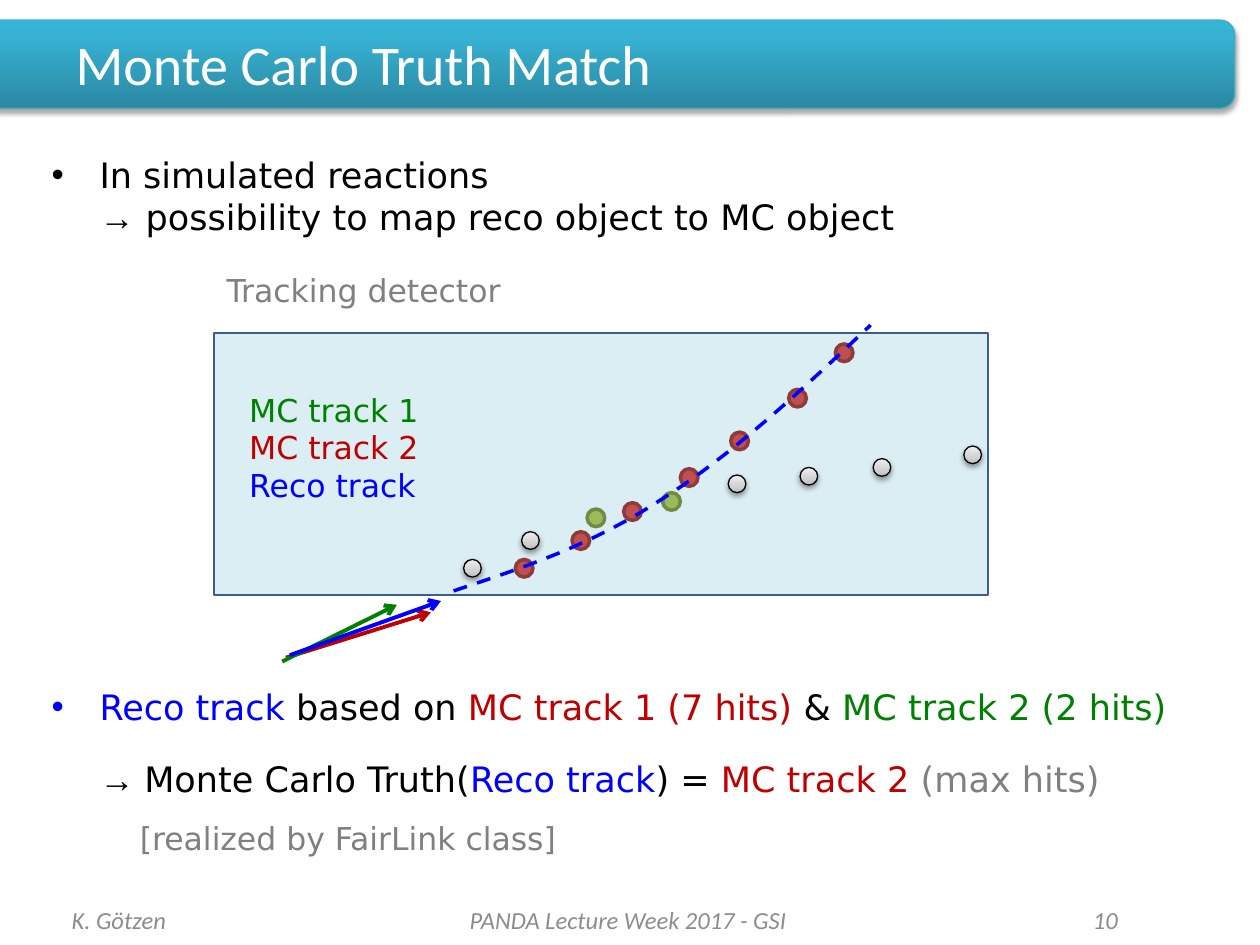
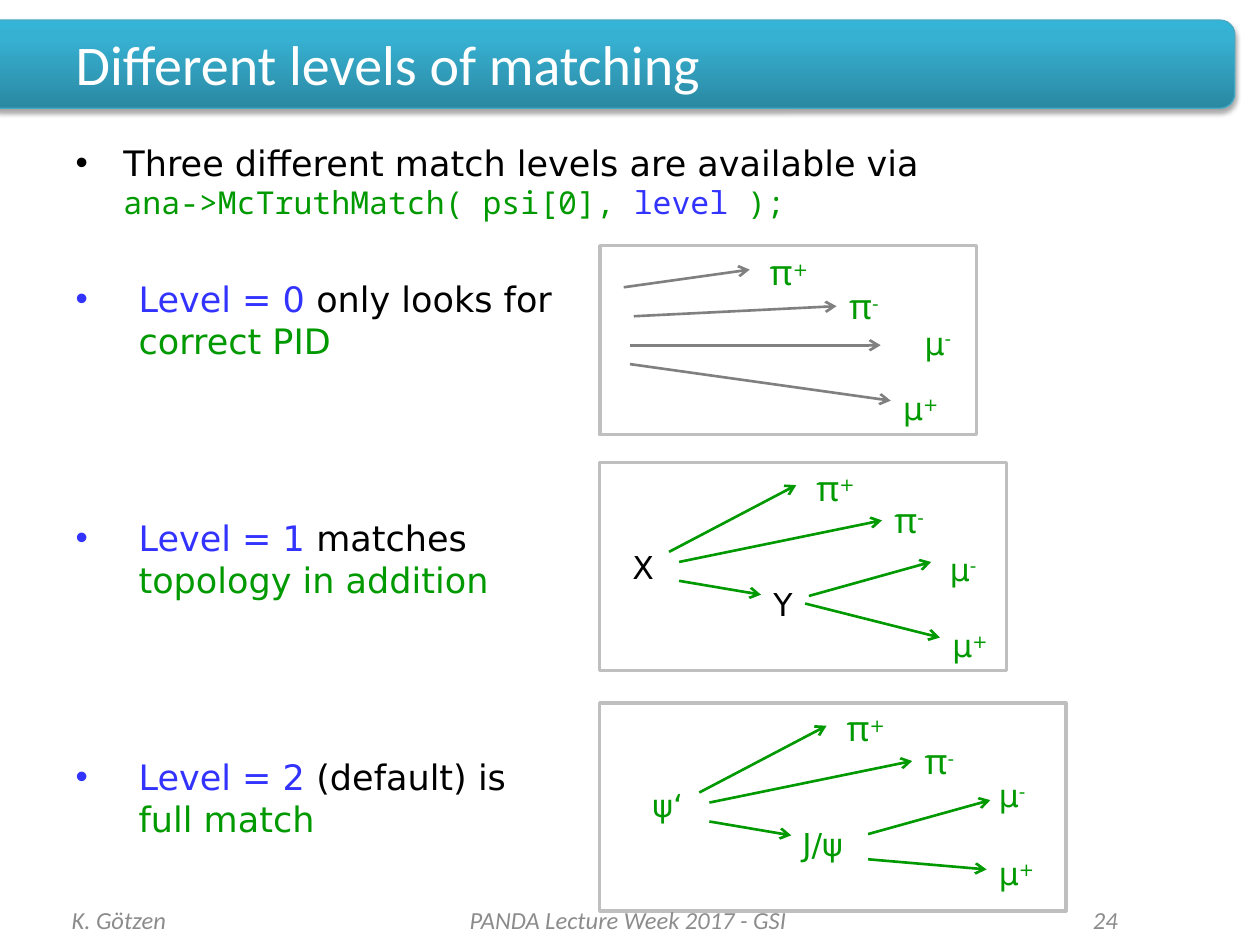
from lxml.etree import SubElement
from pptx import Presentation
from pptx.dml.color import RGBColor
from pptx.enum.dml import MSO_LINE_DASH_STYLE as Dash
from pptx.enum.shapes import MSO_CONNECTOR as Conn, MSO_SHAPE as Shape
from pptx.enum.text import MSO_ANCHOR as Anchor, MSO_AUTO_SIZE as Auto, PP_ALIGN as Align
from pptx.oxml.ns import qn
from pptx.util import Inches, Pt

WIDTH, HEIGHT = Inches(10), Inches(7.5)
COL, ROW = WIDTH / 100, HEIGHT / 75
SANS, MONO, GREEK, HEAD, ARROW = "DejaVu Sans", "Noto Sans Mono", "Cabin", "Calibri", "Arial"
BLACK, WHITE, GREY = "000000", "FFFFFF", "808080"
RED, GREEN, BLUE = "C00000", "008000", "0000FF"
LIME, VIOLET = "009900", "3333FF"

LABEL_SIZES = {"π+": (5.2, 4.4), "π-": (4.6, 4.4), "μ-": (4.4, 4), "μ+": (5, 4),
               "X": (3.8, 4), "Y": (3.6, 4), "ψ‘": (4.8, 4), "J/ψ": (6.4, 4)}
PION_ARROWS = [(5.5, 7.1, 15.6, 1.8), (6.3, 7.9, 22.4, 4.6), (6.3, 9.4, 12.8, 10.5)]
PION_LABELS = [("π+", 16.2, -0.2), ("π-", 22.4, 2.4)]


def rgb(value):
    return RGBColor.from_string(value)


def cells(x, y, w, h):
    return int(x * COL), int(y * ROW), int(w * COL), int(h * ROW)


def place(sp, box):
    sp.left, sp.top, sp.width, sp.height = cells(*box)


def add_runs(p, runs, size=20, font=SANS):
    for text, color, *style in runs:
        for i, part in enumerate(text.split("\n")):
            if i:
                p.add_line_break()
            if part:
                r = p.add_run()
                r.text = part
                r.font.color.rgb = rgb(color)
                r.font.name = style[0] if style else font
                r.font.size = Pt(style[1] if len(style) > 1 else size)


def add_text(s, box, lines, size=18, font=SANS, align=Align.LEFT, wrap=False, anchor=Anchor.TOP):
    sp = s.shapes.add_textbox(*cells(*box))
    tf = sp.text_frame
    tf.word_wrap, tf.vertical_anchor = wrap, anchor
    for i, runs in enumerate(lines):
        p = tf.add_paragraph() if i else tf.paragraphs[0]
        p.alignment = align
        add_runs(p, runs, size, font)
    return sp


def add_figure(s, kind, box, fill, line, width):
    sp = s.shapes.add_shape(kind, *cells(*box))
    sp.shadow.inherit = False
    if fill is None:
        sp.fill.background()
    elif isinstance(fill, str):
        sp.fill.solid()
        sp.fill.fore_color.rgb = rgb(fill)
    else:
        sp.fill.gradient()
        sp.fill.gradient_angle = 90
        stops = sp.element.spPr.find(qn("a:gradFill")).find(qn("a:gsLst"))
        for stop in list(stops):
            stops.remove(stop)
        for position, color in fill:
            stop = SubElement(stops, qn("a:gs"), pos=str(position * 1000))
            SubElement(stop, qn("a:srgbClr"), val=color)
    sp.line.color.rgb = rgb(line)
    sp.line.width = Pt(width)
    return sp


def add_shadow(sp, opacity, blur, distance):
    effects = sp.element.spPr.find(qn("a:effectLst"))
    shadow = SubElement(effects, qn("a:outerShdw"), blurRad=str(Pt(blur)), dist=str(Pt(distance)),
                        dir="5400000", rotWithShape="0")
    color = SubElement(shadow, qn("a:srgbClr"), val=BLACK)
    SubElement(color, qn("a:alpha"), val=str(opacity * 1000))


def add_arrow(s, box, ends, color, width):
    x, y = box[:2]
    x1, y1, x2, y2 = ends
    cx = s.shapes.add_connector(Conn.STRAIGHT, *cells(x + x1, y + y1, x + x2, y + y2))
    cx.line.color.rgb = rgb(color)
    cx.line.width = Pt(width)
    spPr = cx.element.spPr
    SubElement(spPr.find(qn("a:ln")), qn("a:tailEnd"), type="arrow")
    SubElement(spPr, qn("a:effectLst"))
    return cx


def add_band(prs, s):
    sp = add_figure(s, Shape.ROUNDED_RECTANGLE, (-1.2, 1.6, 99.2, 7),
                    [(0, "2A88A2"), (80, "37B1D2"), (100, "34B4D6")], "46AAC5", 0.75)
    add_shadow(sp, 35, 3.1, 1.8)
    prs.slide_master.shapes.element.insert(2, sp.element)


def add_title(s, text):
    sp = s.shapes.title
    place(sp, (5, 1.8, 90, 6.4))
    tf = sp.text_frame
    tf.text = text
    tf.auto_size, tf.vertical_anchor = Auto.NONE, Anchor.MIDDLE
    p = tf.paragraphs[0]
    p.alignment = Align.LEFT
    font = p.runs[0].font
    font.name, font.size, font.color.rgb = HEAD, Pt(32), rgb(WHITE)


def add_body(s, box, items):
    sp = s.placeholders[1]
    place(sp, box)
    tf = sp.text_frame
    tf.auto_size = Auto.NONE
    for i, (gap, margin, bullet, runs) in enumerate(items):
        p = tf.add_paragraph() if i else tf.paragraphs[0]
        if gap:
            p.space_before = Pt(gap)
        pPr = p._p.get_or_add_pPr()
        pPr.set("marL", str(Inches(margin)))
        pPr.set("indent", str(-Inches(margin) if bullet else 0))
        if not bullet:
            SubElement(pPr, qn("a:buNone"))
        add_runs(p, runs)


def add_footer(s, number):
    for x, w, text, align in [(4.7, 23.3, "K. Götzen", Align.LEFT),
                              (30.3, 39.1, "PANDA Lecture Week 2017 - GSI", Align.CENTER),
                              (75, 14.7, str(number), Align.RIGHT)]:
        sp = add_text(s, (x, 71, w, 4), [[(text, "8C8C8C")]], 14, HEAD, align, True, Anchor.MIDDLE)
        sp.text_frame.paragraphs[0].runs[0].font.italic = True


def add_hits(s, box, centres, fill, line, width, shaded=False):
    for x, y in centres:
        sp = add_figure(s, Shape.OVAL, (box[0] + x - 0.7, box[1] + y - 0.7, 1.4, 1.4),
                        fill, line, width)
        if shaded:
            add_shadow(sp, 38, 3.1, 1.6)


def bezier(a, b, c, d, steps=16):
    for i in range(1, steps + 1):
        t = i / steps
        u = 1 - t
        yield tuple(u**3 * k + 3 * u * u * t * m + 3 * u * t * t * n + t**3 * q
                    for k, m, n, q in zip(a, b, c, d))


def add_reco_curve(s, box):
    start, middle, end = (19, 20.5), (35.4, 13.3), (52.1, -0.6)
    curve = [start, *bezier(start, (24.4, 18.7), (29.9, 16.9), middle),
             *bezier(middle, (41, 9.8), (46.6, 4.6), end)]
    points = [(int((box[0] + x) * COL), int((box[1] + y) * ROW)) for x, y in curve]
    builder = s.shapes.build_freeform(*points[0])
    builder.add_line_segments(points[1:], close=False)
    sp = builder.convert_to_shape()
    sp.shadow.inherit = False
    sp.fill.background()
    sp.line.color.rgb = rgb(BLUE)
    sp.line.width, sp.line.dash_style = Pt(2), Dash.DASH


def add_detector(s, box):
    x, y = box[:2]
    add_figure(s, Shape.RECTANGLE, box, "DBEEF4", "3A5F8C", 1)
    add_text(s, (x, y - 5.4, 23.9, 4), [[("Tracking detector", GREY)]])
    add_hits(s, box, [(24.6, 18.7), (29.1, 16.5), (33.2, 14.2), (37.7, 11.5),
                      (41.7, 8.6), (46.3, 5.2), (50, 1.6)], "C0504D", "8E3B39", 2)
    add_hits(s, box, [(20.5, 18.7), (25.1, 16.5), (41.5, 12), (47.2, 11.4), (53, 10.7), (60.2, 9.7)],
             [(0, "BDBDBD"), (35, "D1D1D1"), (100, "EEEEEE")], BLACK, 0.75, True)
    add_hits(s, box, [(30.3, 14.7), (36.3, 13.4)], "9BBB59", "738A42", 2)
    add_text(s, (x + 1.8, y + 4.1, 15.6, 10.1),
             [[("MC track 1", GREEN)], [("MC track 2", RED)], [("Reco track", BLUE)]])
    for ends, color in [((5.7, 25.8, 17.2, 22.2), RED), ((5.4, 26.1, 14.5, 21.6), GREEN),
                        ((6, 25.6, 18, 21.3), BLUE)]:
        add_arrow(s, box, ends, color, 2.25)
    add_reco_curve(s, box)


def add_particle(s, box, name, x, y, color):
    w, h = LABEL_SIZES[name]
    pion = name[0] == "π"
    runs = [(name[0], color, GREEK, 20) if pion else (name[0], color)]
    charged = name[1:] in ("+", "-")
    if name[1:]:
        runs = runs + [(name[1:], color)] if charged else [(name, color)]
    sp = add_text(s, (box[0] + x, box[1] + y, w, h), [runs])
    if charged:
        r = sp.text_frame.paragraphs[0].runs[1]
        r._r.get_or_add_rPr().set("baseline", "30000")
    return sp, (x, y + h / 2)


def add_decay(s, box, arrows, labels, arrow_color=LIME, name_color=LIME, shift=0):
    particles = [add_particle(s, box, name, x + shift, y, name_color if name in ("X", "Y") else LIME)
                 for name, x, y in labels]
    for x1, y1, x2, y2 in arrows:
        end = x2 + shift, y2
        cx = add_arrow(s, box, (x1 + shift, y1, *end), arrow_color, 1.5)
        for sp, port in particles:
            if all(abs(a - b) < 0.01 for a, b in zip(end, port)):
                cx.end_connect(sp, 1)
    add_figure(s, Shape.RECTANGLE, box, None, "BFBFBF", 2)


def truth_slide(s):
    add_title(s, "Monte Carlo Truth Match")
    add_body(s, (3.1, 11.7, 93.8, 57.8), [
        (0, 0.38, True, [("In simulated reactions \n", BLACK), ("→", BLACK, ARROW),
                         (" possibility to map reco object to MC object", BLACK)]),
        (256, 0.38, True, [("Reco track ", BLUE), ("based on ", BLACK), ("MC track 1 (7 hits) ", RED),
                           ("& ", BLACK), ("MC track 2 (2 hits)", GREEN)]),
        (17, 0.38, False, [("→ ", BLACK, ARROW), ("Monte Carlo Truth(", BLACK), ("Reco track", BLUE),
                           (") = ", BLACK), ("MC track 2 ", RED), ("(max hits)", GREY)]),
        (11, 0.7, False, [("[realized by FairLink class]", GREY, SANS, 18)])])
    add_detector(s, (17, 26.4, 61.4, 20.8))
    add_footer(s, 10)


def levels_slide(s):
    add_title(s, "Different levels of matching")
    levels = [("Level = 0 ", "only looks for \n", "correct PID"),
              ("Level = 1", " matches\n", "topology in addition"),
              ("Level = 2", " (default) is \n", "full match")]
    add_body(s, (5, 10.7, 90, 59.1), [
        (0, 0.38, True, [("Three different match levels are available via\n", BLACK),
                         ("ana->McTruthMatch( psi[0], ", LIME, MONO, 18),
                         ("level", VIOLET, MONO, 18), (" );", LIME, MONO, 18)])] + [
        (88.5 if i else 32.5, 0.5, True, list(zip(level, (VIOLET, BLACK, LIME))))
        for i, level in enumerate(levels)])
    add_decay(s, (47.6, 19.5, 29.9, 15),
              [(1.9, 3.3, 11.9, 1.9), (2.7, 5.6, 18.8, 4.8),
               (2.4, 7.9, 22.3, 7.9), (2.4, 9.4, 23.1, 12.3)],
              [("π+", 12.5, -0.1), ("π-", 18.8, 2.6), ("μ-", 24.8, 5.7), ("μ+", 23.1, 10.9)], GREY)
    add_decay(s, (47.6, 36.7, 32.3, 16.5),
              PION_ARROWS + [(16.6, 10.6, 26.3, 7.9), (16.3, 11.2, 27, 13.9)],
              PION_LABELS + [("X", 1.6, 6.3), ("Y", 12.8, 9.2), ("μ-", 26.8, 6.5), ("μ+", 27, 12.5)],
              name_color=BLACK)
    add_decay(s, (47.6, 55.8, 37, 16.5),
              PION_ARROWS + [(18.9, 10.4, 28.6, 7.7), (18.9, 12.4, 28.3, 13.2)],
              PION_LABELS + [("ψ‘", 0.8, 6.1), ("J/ψ", 12.7, 9.2), ("μ-", 28.3, 5.3), ("μ+", 28.3, 11.5)],
              shift=2.4)
    add_footer(s, 24)


def main():
    prs = Presentation()
    prs.slide_width, prs.slide_height = WIDTH, HEIGHT
    layout = prs.slide_layouts[1]
    for i, build in enumerate((truth_slide, levels_slide)):
        s = prs.slides.add_slide(layout)
        if i == 0:
            add_band(prs, s)
        build(s)
    prs.save("out.pptx")


if __name__ == "__main__":
    main()
